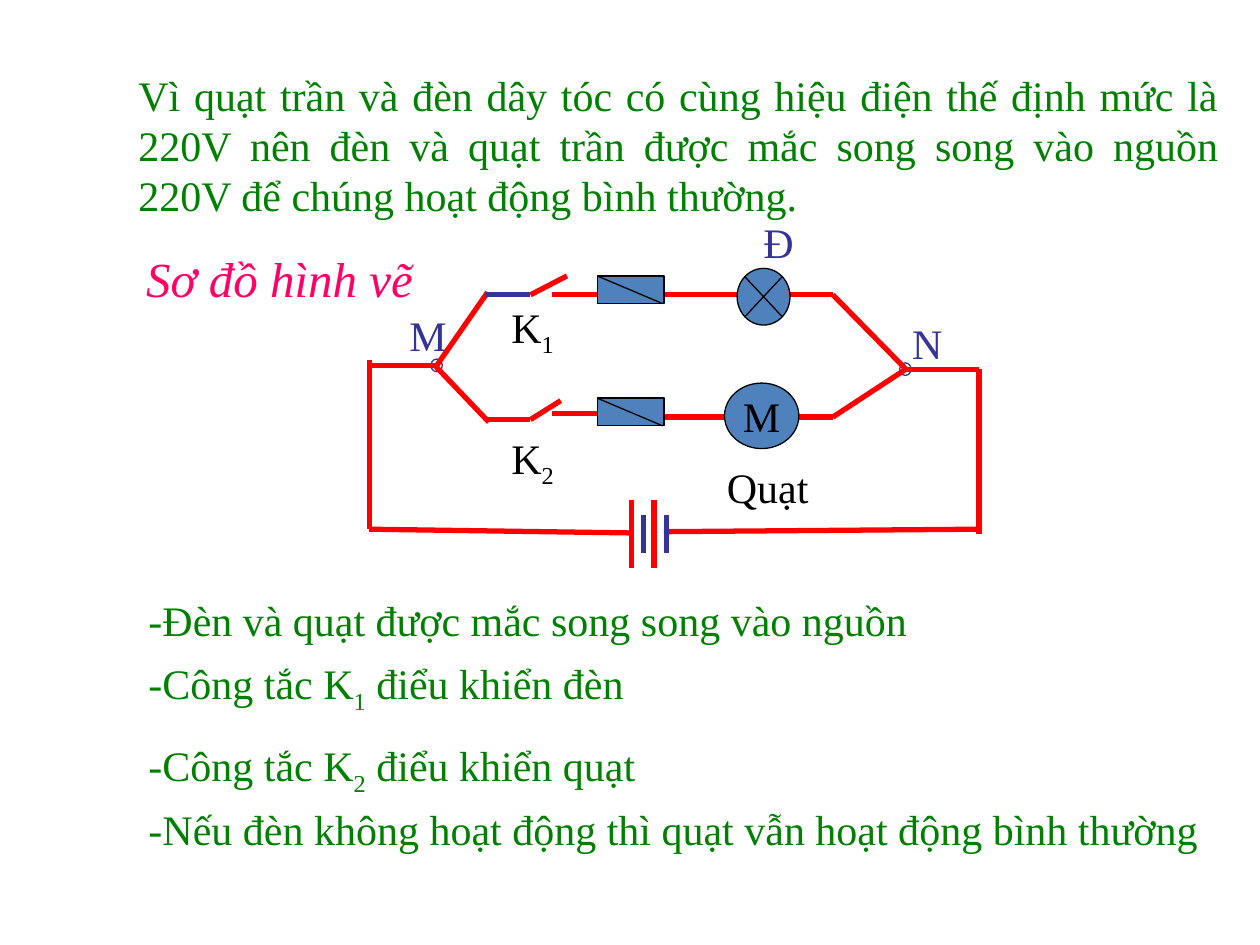
from pptx import Presentation, util as u
from pptx.dml.color import RGBColor
from pptx.enum import shapes, text
from pptx.oxml.ns import qn
from lxml import etree

GREEN = RGBColor(0x00, 0x80, 0x00)
PINK = RGBColor(0xFF, 0x00, 0x66)
RED = RGBColor(0xFF, 0x00, 0x00)
INDIGO = RGBColor(0x33, 0x33, 0x99)
BLUE = RGBColor(0x4F, 0x81, 0xBD)
BLACK = RGBColor(0x00, 0x00, 0x00)
WHITE = RGBColor(0xFF, 0xFF, 0xFF)

FONT = "Times New Roman"
COLS, ROWS = 100, 75  # slide grid, one cell is a tenth of an inch
LEFT = text.PP_ALIGN.LEFT


class Grid:
    """Places parts on slide cells, counted from the corner of a box."""

    def __init__(self, prs, s, left, top):
        self.s, self.left, self.top = s, left, top
        self.cw, self.ch = prs.slide_width / COLS, prs.slide_height / ROWS

    def x(self, col):
        return round((self.left + col) * self.cw)

    def y(self, row):
        return round((self.top + row) * self.ch)

    def box(self, col, row, w, h):
        return self.x(col), self.y(row), round(w * self.cw), round(h * self.ch)

    def text(self, words, col, row, w, h, **fmt):
        sp = self.s.shapes.add_textbox(*self.box(col, row, w, h))
        write(sp, words, **fmt)

    def shape(self, kind, col, row, w, h, fill=BLUE, line=BLACK):
        sp = self.s.shapes.add_shape(kind, *self.box(col, row, w, h))
        sp.shadow.inherit = False
        sp.fill.solid()
        sp.fill.fore_color.rgb = fill
        sp.line.color.rgb = line
        sp.line.width = u.Pt(0.75)
        return sp

    def wire(self, *points, color=RED, width=3):
        for (x1, y1), (x2, y2) in zip(points, points[1:]):
            c = self.s.shapes.add_connector(
                shapes.MSO_CONNECTOR.STRAIGHT,
                self.x(x1), self.y(y1), self.x(x2), self.y(y2))
            c.line.color.rgb = color
            c.line.width = u.Pt(width)
            etree.SubElement(c._element.spPr, qn("a:effectLst"))


def write(sp, words, size=24, color=GREEN, italic=False, align=LEFT,
          wrap=True, gap=0, anchor=text.MSO_ANCHOR.TOP, grow=True):
    """Writes one paragraph a line; the character after "_" is a subscript."""
    tf = sp.text_frame
    tf.word_wrap = wrap
    tf.vertical_anchor = anchor
    fit = text.MSO_AUTO_SIZE
    tf.auto_size = fit.SHAPE_TO_FIT_TEXT if grow else fit.NONE
    for i, line in enumerate(words.split("\n")):
        p = tf.add_paragraph() if i else tf.paragraphs[0]
        p.alignment = align
        p.space_before = u.Pt(gap if i else 0)
        first, *rest = line.split("_")
        pieces = [(first, False)]
        for part in rest:
            pieces += [(part[0], True), (part[1:], False)]
        for piece, sub in pieces:
            if not piece:
                continue
            r = p.add_run()
            r.text = piece
            r.font.name, r.font.size = FONT, u.Pt(size)
            r.font.italic, r.font.color.rgb = italic, color
            if sub:
                r.font._element.set("baseline", "-25000")


def add_title(g, w, h):
    sp = g.s.shapes.title
    sp.left, sp.top, sp.width, sp.height = g.box(0, 0, w, h)
    write(sp, "Sơ đồ hình vẽ", size=28, color=PINK, italic=True, wrap=False)


def add_intro(g, w, h):
    g.text("Vì quạt trần và đèn dây tóc có cùng hiệu điện thế định mức là "
           "220V nên đèn và quạt trần được mắc song song vào nguồn 220V "
           "để chúng hoạt động bình thường.", 0, 0, w, h,
           align=text.PP_ALIGN.JUSTIFY)


def add_notes(g, w):
    g.text("-Đèn và quạt được mắc song song vào nguồn", 0, 0, w, 5)
    g.text("-Công tắc K_1 điểu khiển đèn\n-Công tắc K_2 điểu khiển quạt",
           0, 5, w, 11.1, gap=14)
    g.text("-Nếu đèn không hoạt động thì quạt vẫn hoạt động bình thường",
           0, 16.6, w, 5, wrap=False)


def add_branch(g, row, label, label_row, start, lead, contact, tip,
               lead_color=RED):
    """Switch, fuse and wires of one branch; the load goes on top."""
    lead_row = row + lead
    g.wire((5.6, 13.1), start)
    g.wire((9.6, lead_row), (13.1, lead_row), color=lead_color)
    g.wire((13.1, lead_row), tip)
    g.wire((14.8, row + contact), (18.4, row + contact))
    g.wire((23.6, row), (37.1, row), (42.9, 13.3))
    # Fuse with its diagonal
    top = row - 1.5
    g.shape(shapes.MSO_SHAPE.RECTANGLE, 18.4, top, 5.3, 2.2)
    g.wire((18.4, top), (23.6, top + 2.2), color=BLACK, width=0.75)
    g.text(label, 10.6, label_row, 6, 4.5, color=BLACK)


def add_circuit(g):
    oval = shapes.MSO_SHAPE.OVAL
    # Nodes M and N
    for col, row in ((5.2, 12.5), (42.4, 12.8)):
        g.shape(oval, col, row, 0.9, 1, fill=WHITE, line=INDIGO)
    g.text("M", 2.5, 8.1, 5.5, 4.5, color=INDIGO)
    g.text("N", 42.4, 8.7, 4, 4.5, color=INDIGO, wrap=False)
    # Outer loop
    g.wire((0.2, 13), (5.6, 13))
    g.wire((0.3, 12.6), (0.3, 26), (21.3, 26.3))
    g.wire((42.8, 13.3), (48.7, 13.3), (48.7, 26.4))
    g.wire((23.7, 26.2), (48.6, 26))
    # Two battery cells, each a long and a short plate
    for col in (21.1, 22.9):
        g.wire((col, 23.7), (col, 29.1))
        g.wire((col + 1, 24.9), (col + 1, 27.9), color=INDIGO)
    # Lamp branch
    add_branch(g, 7.4, "K_1", 7.4, start=(9.7, 7.2), lead=0, contact=0,
               tip=(16, 5.9), lead_color=INDIGO)
    g.shape(shapes.MSO_SHAPE.FLOWCHART_SUMMING_JUNCTION, 29.5, 5.3, 4.2, 4.5)
    g.text("Đ", 30.6, 0.7, 6, 4.5, color=INDIGO)
    # Fan branch
    add_branch(g, 17.1, "K_2", 17.8, start=(9.8, 17.5), lead=0.2,
               contact=-0.3, tip=(15.5, 15.8))
    motor = g.shape(oval, 28.5, 14.4, 5.9, 5.2)
    write(motor, "M", color=BLACK, align=text.PP_ALIGN.CENTER, wrap=False,
          anchor=text.MSO_ANCHOR.MIDDLE, grow=False)
    g.text("Quạt", 27.7, 20.1, 8.8, 4.5, color=BLACK)


def main():
    prs = Presentation()
    prs.slide_width, prs.slide_height = u.Inches(10), u.Inches(7.5)
    s = prs.slides.add_slide(prs.slide_layouts[5])
    add_title(Grid(prs, s, 10.6, 19.2), 23.8, 5.7)
    add_circuit(Grid(prs, s, 29, 16))
    add_notes(Grid(prs, s, 10.8, 46.7), 86.9)
    add_intro(Grid(prs, s, 10, 5), 87.7, 13.3)
    prs.save("out.pptx")


if __name__ == "__main__":
    main()
